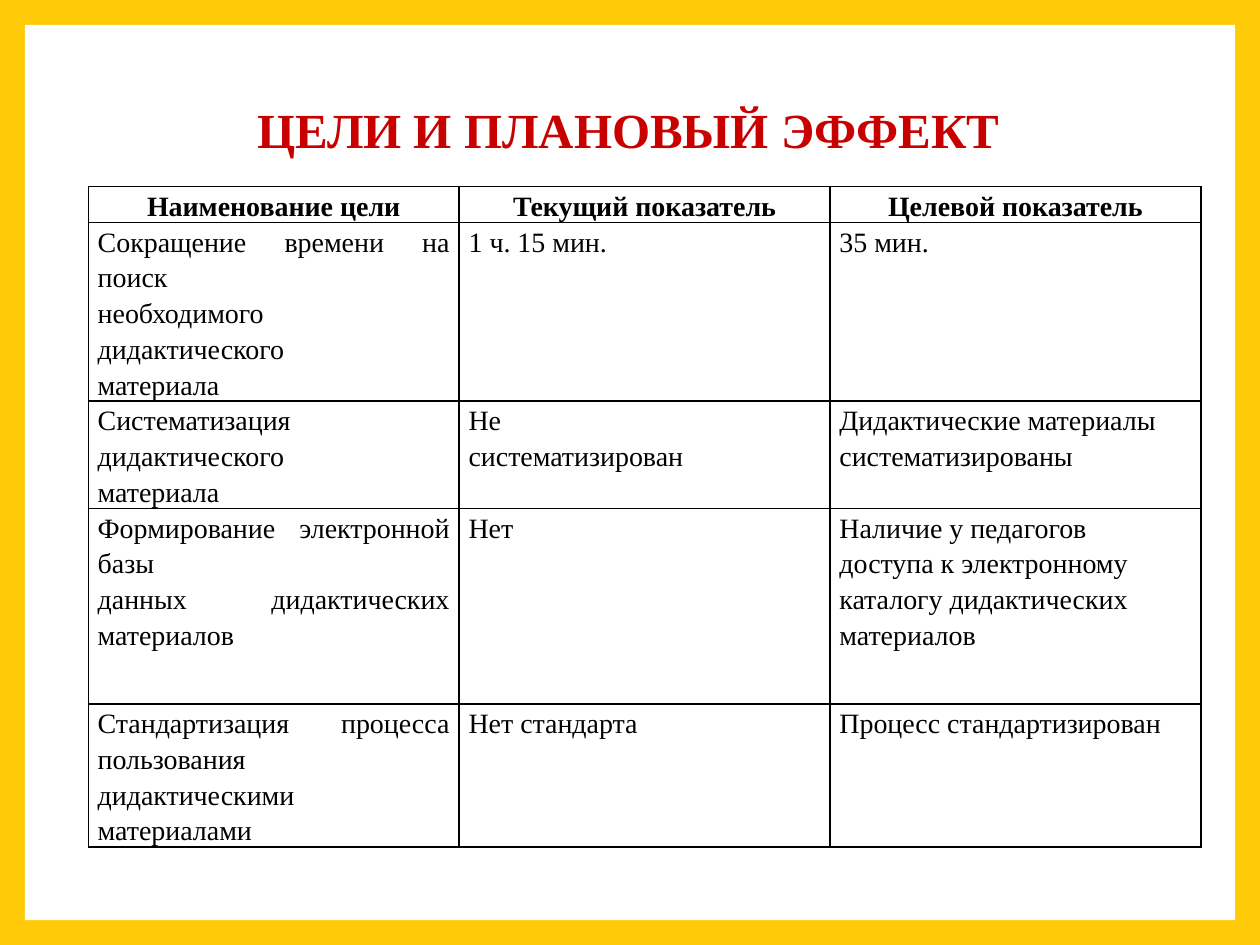
from dataclasses import dataclass

from lxml import etree
from pptx import Presentation
from pptx import util as u
from pptx.dml import color
from pptx.enum import shapes, text
from pptx.oxml import ns


@dataclass(frozen=True)
class Theme:
    font: str = "Times New Roman"
    frame: str = "FFCA08"
    panel: str = "FFFFFF"
    heading: str = "C90000"
    ink: str = "000000"
    heading_size: int = 28
    table_size: int = 16
    border: int = 1


theme = Theme()


def write(frame, content, *, size, ink, bold=False, align=text.PP_ALIGN.JUSTIFY, spacing=1.15):
    """Fill a text frame, one paragraph per line of content."""
    frame.text = content
    for paragraph in frame.paragraphs:
        paragraph.alignment = align
        paragraph.line_spacing = spacing
        paragraph.space_before = paragraph.space_after = u.Pt(0)
        for run in paragraph.runs:
            run.font.name = theme.font
            run.font.size = u.Pt(size)
            run.font.bold = bold
            run.font.color.rgb = color.RGBColor.from_string(ink)


def outline(cell):
    """Draw all four borders of a table cell."""
    properties = cell._tc.get_or_add_tcPr()
    for side in ("a:lnL", "a:lnR", "a:lnT", "a:lnB"):
        line = etree.SubElement(properties, ns.qn(side), w=str(u.Pt(theme.border)))
        fill = etree.SubElement(line, ns.qn("a:solidFill"))
        etree.SubElement(fill, ns.qn("a:srgbClr"), val=theme.ink)


# Slide and coloured frame
presentation = Presentation()
presentation.slide_width, presentation.slide_height = u.Cm(25.4), u.Cm(19.05)
slide = presentation.slides.add_slide(presentation.slide_layouts[5])
slide.background.fill.solid()
slide.background.fill.fore_color.rgb = color.RGBColor.from_string(theme.frame)

# White panel, placed behind the heading
margin = u.Cm(0.5)
panel = slide.shapes.add_shape(
    shapes.MSO_SHAPE.RECTANGLE, margin, margin,
    presentation.slide_width - 2 * margin, presentation.slide_height - 2 * margin)
panel.shadow.inherit = False
panel.fill.solid()
panel.fill.fore_color.rgb = color.RGBColor.from_string(theme.panel)
panel.line.fill.background()

# Heading
heading = slide.shapes.title
heading.element.addprevious(panel.element)
heading.left, heading.top = u.Cm(2.38), u.Cm(0.79)
heading.width, heading.height = u.Cm(20.57), u.Cm(3.75)
heading.text_frame.auto_size = text.MSO_AUTO_SIZE.NONE
heading.text_frame.vertical_anchor = text.MSO_ANCHOR.MIDDLE
write(heading.text_frame, "ЦЕЛИ И ПЛАНОВЫЙ ЭФФЕКТ", size=theme.heading_size,
      ink=theme.heading, bold=True, align=text.PP_ALIGN.CENTER, spacing=0.9)

# Goals: name, current indicator, target indicator
goals = [
    ("Наименование цели", "Текущий показатель", "Целевой показатель"),
    ("Сокращение времени на поиск\nнеобходимого дидактического\nматериала",
     "1 ч. 15 мин.", "35 мин."),
    ("Систематизация дидактического\nматериала", "Не\nсистематизирован",
     "Дидактические материалы\nсистематизированы"),
    ("Формирование электронной базы\nданных дидактических материалов", "Нет",
     "Наличие у педагогов\nдоступа к электронному\nкаталогу дидактических\nматериалов"),
    ("Стандартизация процесса пользования\nдидактическими материалами",
     "Нет стандарта", "Процесс стандартизирован"),
]
row_heights = [0.66, 3.28, 1.96, 3.94, 2.62]

# Table of goals
goal_table = slide.shapes.add_table(
    len(goals), len(goals[0]), u.Cm(1.78), u.Cm(3.76),
    u.Cm(22.43), u.Cm(sum(row_heights))).table
goal_table.first_row = goal_table.horz_banding = False
for row_index, (goal, height) in enumerate(zip(goals, row_heights)):
    goal_table.rows[row_index].height = u.Cm(height)
    is_header = row_index == 0
    for column_index, content in enumerate(goal):
        cell = goal_table.cell(row_index, column_index)
        cell.margin_left = cell.margin_right = u.Cm(0.19)
        cell.margin_top = cell.margin_bottom = u.Cm(0)
        outline(cell)
        cell.fill.background()
        write(cell.text_frame, content, size=theme.table_size, ink=theme.ink, bold=is_header,
              align=text.PP_ALIGN.CENTER if is_header else text.PP_ALIGN.JUSTIFY)

presentation.save("out.pptx")
